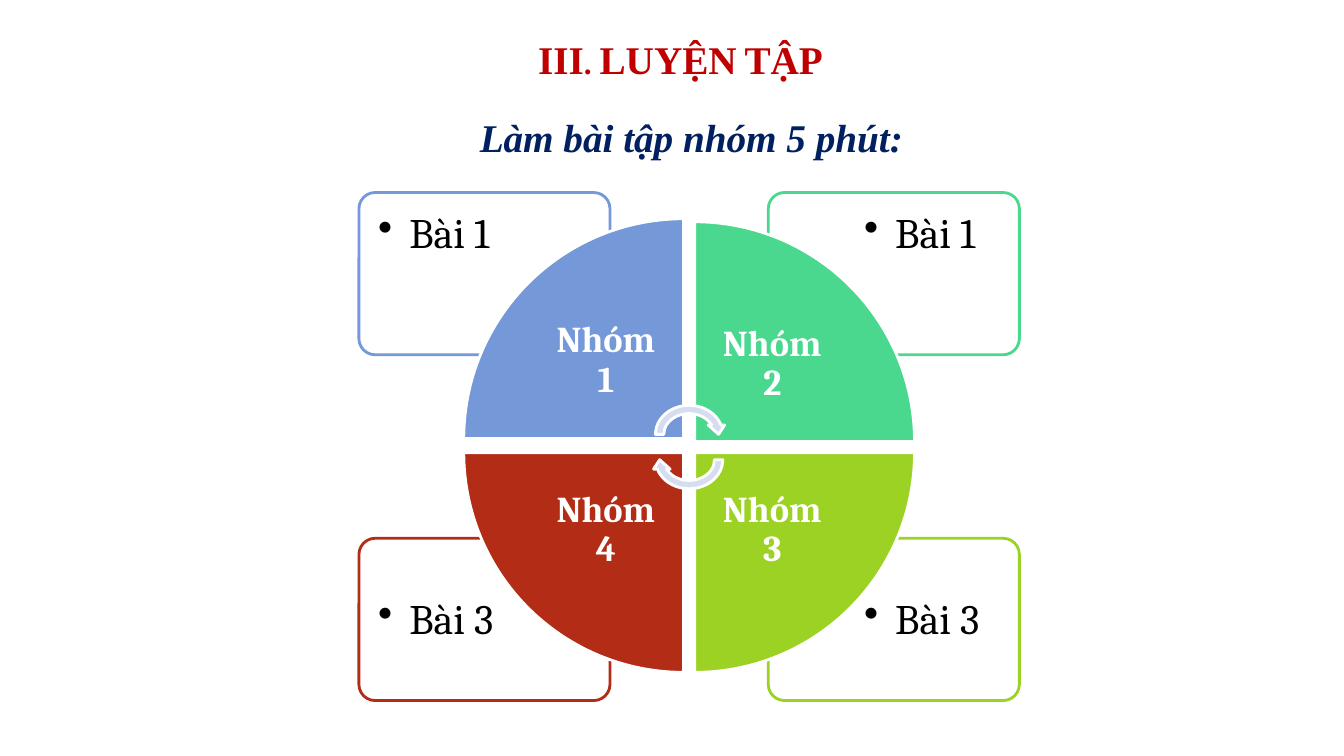
from lxml import etree
from pptx import Presentation
from pptx import util as u
from pptx.dml.color import RGBColor
from pptx.enum import shapes, text
from pptx.oxml.ns import qn

COLORS = {
    "title": "C00000", "subtitle": "002060", "ink": "000000", "white": "FFFFFF",
    "arrow": "D6DDF1", "blue": "7598D9", "green": "4AD78E", "lime": "9CD224",
    "red": "B32C16",
}
PX = 9144
WEDGE, LABEL = 218, 154


class GroupSlide:
    """Hold the slide and its style, and draw each kind of element."""

    def __init__(self, deck):
        self.slide = deck.slides.add_slide(deck.slide_layouts[5])
        self.heading_font, self.body_font = "Times New Roman", "Cambria"

    def color(self, name):
        return RGBColor.from_string(COLORS[name])

    def style(self, para, size, color, face, bold=False, italic=False):
        font = para.font
        font.name, font.size = face, u.Pt(size)
        font.bold, font.italic = bold, italic
        font.color.rgb = self.color(color)

    def title(self, words, left, top, width, height):
        box = self.slide.shapes.title
        box.left, box.top, box.width, box.height = (
            v * PX for v in (left, top, width, height))
        frame = box.text_frame
        frame.text = words
        frame.vertical_anchor = text.MSO_ANCHOR.BOTTOM
        para = frame.paragraphs[0]
        para.alignment = text.PP_ALIGN.CENTER
        self.style(para, 28, "title", self.heading_font, bold=True)
        para.runs[0].font._element.set("cap", "small")

    def textbox(self, words, left, top, width, height, inset=None):
        box = self.slide.shapes.add_textbox(
            *(v * PX for v in (left, top, width, height)))
        frame = box.text_frame
        frame.text = words
        if inset is not None:
            frame.word_wrap = True
            frame.margin_left = frame.margin_right = inset * PX
            frame.margin_top = frame.margin_bottom = inset * PX
            frame.paragraphs[0].line_spacing = 0.9
        return frame, frame.paragraphs[0]

    def subtitle(self, words, *place):
        para = self.textbox(words, *place)[1]
        self.style(para, 28, "subtitle", self.heading_font, bold=True, italic=True)

    def bullet(self, words, left, top):
        para = self.textbox(words, left, top, 167, 114, inset=16)[1]
        self.style(para, 30, "ink", self.body_font)
        props = para._p.get_or_add_pPr()
        props.set("marL", str(31 * PX))
        props.set("indent", str(-31 * PX))
        mark = etree.Element(qn("a:buChar"), char="•")
        props.find(qn("a:defRPr")).addprevious(mark)

    def label(self, words, left, top):
        frame, para = self.textbox(words, left, top, LABEL, LABEL, inset=20)
        frame.vertical_anchor = text.MSO_ANCHOR.MIDDLE
        para.alignment = text.PP_ALIGN.CENTER
        self.style(para, 26, "white", self.body_font, bold=True)

    def shape(self, kind, place, fill, line, rotation=0):
        shape = self.slide.shapes.add_shape(kind, *(v * PX for v in place))
        shape.shadow.inherit = False
        shape.rotation = rotation
        shape.fill.solid()
        shape.fill.fore_color.rgb = self.color(fill)
        shape.line.color.rgb = self.color(line)
        shape.line.width = u.Pt(2)
        return shape

    def card(self, left, top, line):
        card = self.shape(shapes.MSO_SHAPE.ROUNDED_RECTANGLE,
                          (left, top, 249, 161), "white", line)
        card.adjustments[0] = 0.1
        tint = card._element.spPr.find(qn("a:solidFill"))[0]
        etree.SubElement(tint, qn("a:alpha"), val="90000")

    def wedge(self, left, top, fill, rotation):
        self.shape(shapes.MSO_SHAPE.PIE_WEDGE, (left, top, WEDGE, WEDGE),
                   fill, "white", rotation)

    def arrow(self, top, rotation):
        self.shape(shapes.MSO_SHAPE.CIRCULAR_ARROW, (646, top, 75, 66),
                   "arrow", "white", rotation)


def main():
    deck = Presentation()
    deck.slide_width, deck.slide_height = u.Inches(13.33), u.Inches(7.5)
    page = GroupSlide(deck)
    page.title("III. LUYỆN TẬP", 75, -38, 1200, 125)
    page.subtitle("Làm bài tập nhóm 5 phút:", 466, 108, 445, 57)

    groups = [
        ("Nhóm 1", "Bài 1", "blue", 0, 0, 217),
        ("Nhóm 2", "Bài 1", "green", 1, 0, 220),
        ("Nhóm 3", "Bài 3", "lime", 1, 1, 449),
        ("Nhóm 4", "Bài 3", "red", 0, 1, 449),
    ]
    for name, task, color, column, row, wedge_top in reversed(groups):
        page.card((356, 762)[column], (191, 534)[row], color)
        page.bullet(task, (359, 841)[column], (195, 578)[row])
    for turn, (name, task, color, column, row, wedge_top) in enumerate(groups):
        left = (460, 689)[column]
        page.wedge(left, wedge_top, color, 90 * turn)
        page.label(name, left + (WEDGE - LABEL) * (1 - column),
                   wedge_top + (WEDGE - LABEL) * (1 - row))
    page.arrow(398, 0)
    page.arrow(423, 180)
    deck.save("out.pptx")


if __name__ == "__main__":
    main()
